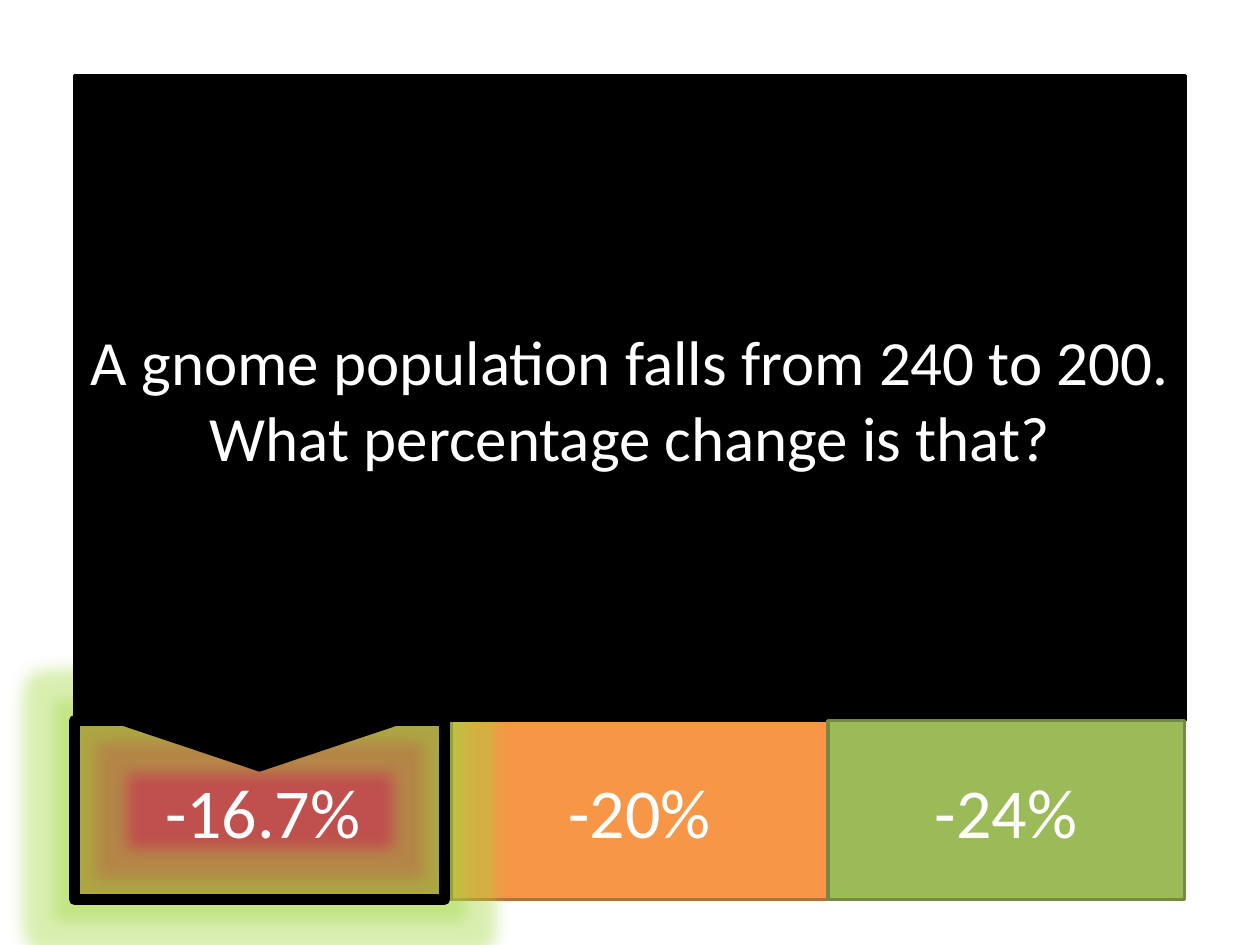
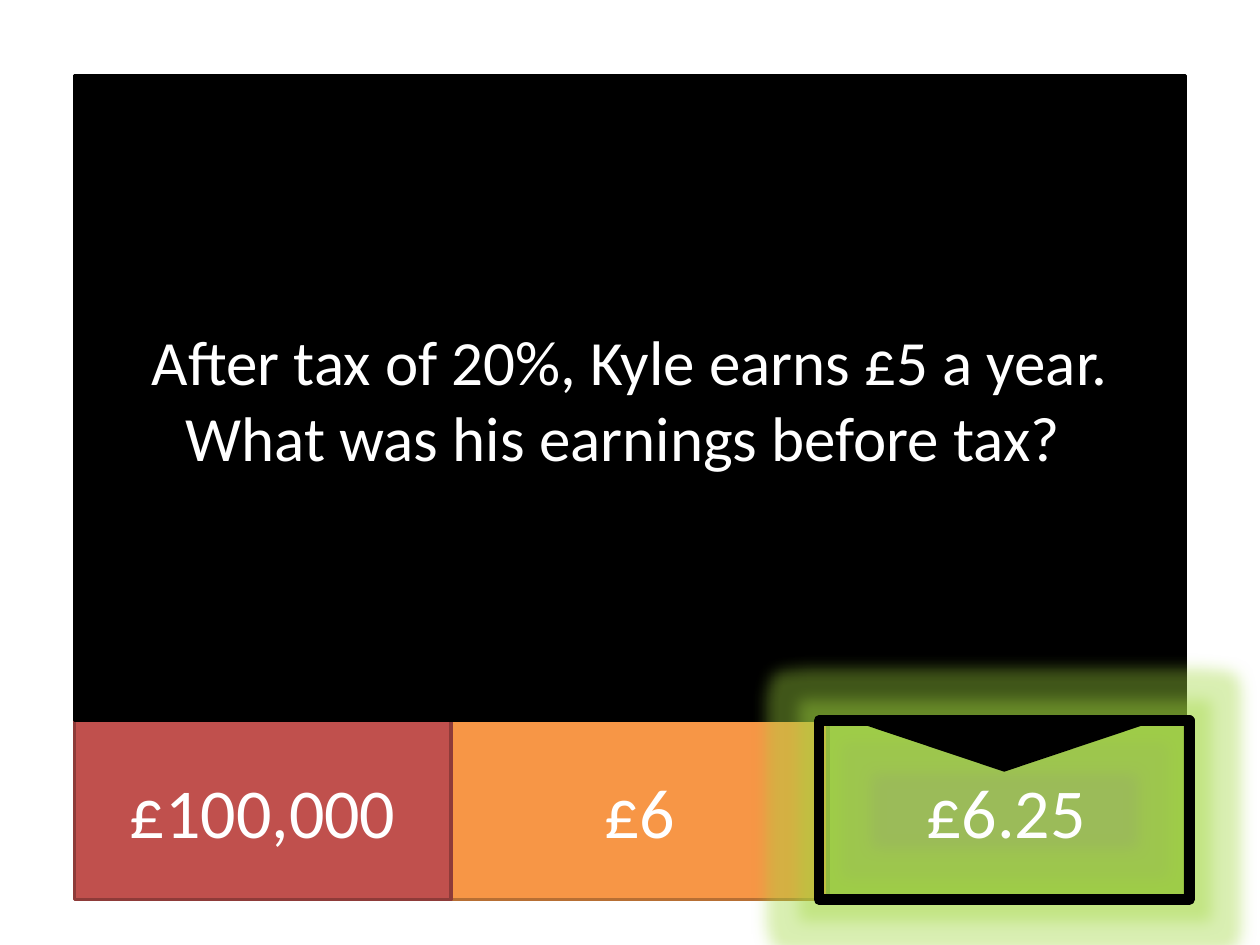
"""Build two quiz slides, each with a question board, three answers and the right one marked."""
import lxml.etree
import pptx
import pptx.dml.color
import pptx.enum.shapes
import pptx.enum.text
import pptx.oxml.ns
import pptx.util

Inches = pptx.util.Inches
Color = pptx.dml.color.RGBColor
Shapes = pptx.enum.shapes.MSO_SHAPE

BLACK = Color(0x00, 0x00, 0x00)
WHITE = Color(0xFF, 0xFF, 0xFF)
GLOW = Color(0xA2, 0xD7, 0x3F)
FONT = "Calibri"

QUESTIONS = [
    {
        "question": "A gnome population falls from 240 to 200. What percentage change is that?",
        "answers": ["-16.7%", "-20%", "-24%"],
        "correct": 0,
    },
    {
        "question": "After tax of 20%, Kyle earns £5 a year. What was his earnings before tax? ",
        "answers": ["£100,000", "£6", "£6.25"],
        "correct": 2,
    },
]

BOARD = (0.59, 0.6, 8.82, 5.12)
ANSWER_TOP, ANSWER_HEIGHT = 5.72, 1.42
ANSWER_STYLES = [
    {"left": 0.59, "width": 2.99, "fill": Color(0xC0, 0x50, 0x4D), "line": Color(0x8E, 0x3B, 0x39)},
    {"left": 3.58, "width": 2.99, "fill": Color(0xF7, 0x96, 0x46), "line": Color(0xB7, 0x6F, 0x34)},
    {"left": 6.57, "width": 2.83, "fill": Color(0x9B, 0xBB, 0x59), "line": Color(0x73, 0x8A, 0x42)},
]
MARKER_LEFTS = {0: 0.59, 2: 6.5}
MARKER_WIDTH = 2.94
POINTER_WIDTH, POINTER_HEIGHT = 2.33, 0.39
GLOW_RADIUS = 18
GLOW_OPACITY = 40


def add_shape(shapes, kind, box, fill, line, line_width=2):
    shape = shapes.add_shape(kind, *(Inches(length) for length in box))
    shape.shadow.inherit = False
    if fill is None:
        shape.fill.background()
    else:
        shape.fill.solid()
        shape.fill.fore_color.rgb = fill
    shape.line.color.rgb = line
    shape.line.width = pptx.util.Pt(line_width)
    return shape


def write_text(shape, text, size, color=WHITE):
    frame = shape.text_frame
    frame.word_wrap = True
    frame.vertical_anchor = pptx.enum.text.MSO_ANCHOR.MIDDLE
    paragraph = frame.paragraphs[0]
    paragraph.alignment = pptx.enum.text.PP_ALIGN.CENTER
    run = paragraph.add_run()
    run.text = text
    run.font.name = FONT
    run.font.size = pptx.util.Pt(size)
    run.font.color.rgb = color


def add_glow(shape):
    qualified = pptx.oxml.ns.qn
    effects = shape.element.spPr.find(qualified("a:effectLst"))
    radius = str(int(pptx.util.Pt(GLOW_RADIUS)))
    glow = lxml.etree.SubElement(effects, qualified("a:glow"), rad=radius)
    color = lxml.etree.SubElement(glow, qualified("a:srgbClr"), val=str(GLOW))
    lxml.etree.SubElement(color, qualified("a:alpha"), val=str(GLOW_OPACITY * 1000))


def add_marker(slide, left):
    group = slide.shapes.add_group_shape()
    frame_box = (left, ANSWER_TOP, MARKER_WIDTH, ANSWER_HEIGHT)
    add_glow(add_shape(group.shapes, Shapes.RECTANGLE, frame_box, None, BLACK, 6))
    pointer_left = left + (MARKER_WIDTH - POINTER_WIDTH) / 2
    pointer_box = (pointer_left, ANSWER_TOP, POINTER_WIDTH, POINTER_HEIGHT)
    pointer = add_shape(group.shapes, Shapes.ISOSCELES_TRIANGLE, pointer_box, BLACK, BLACK)
    pointer.rotation = 180


def add_answer(slide, content, index):
    style = ANSWER_STYLES[index]
    box = (style["left"], ANSWER_TOP, style["width"], ANSWER_HEIGHT)
    tile = add_shape(slide.shapes, Shapes.RECTANGLE, box, style["fill"], style["line"])
    write_text(tile, content["answers"][index], 40)
    if index == content["correct"]:
        add_marker(slide, MARKER_LEFTS[index])


def add_question_slide(presentation, content):
    slide = presentation.slides.add_slide(presentation.slide_layouts[6])
    add_answer(slide, content, 1)
    add_answer(slide, content, 0)
    board = add_shape(slide.shapes, Shapes.RECTANGLE, BOARD, BLACK, BLACK)
    write_text(board, content["question"], 36)
    add_answer(slide, content, 2)


def main():
    presentation = pptx.Presentation()
    presentation.slide_width = Inches(10)
    presentation.slide_height = Inches(7.5)
    for content in QUESTIONS:
        add_question_slide(presentation, content)
    presentation.save("out.pptx")


if __name__ == "__main__":
    main()
